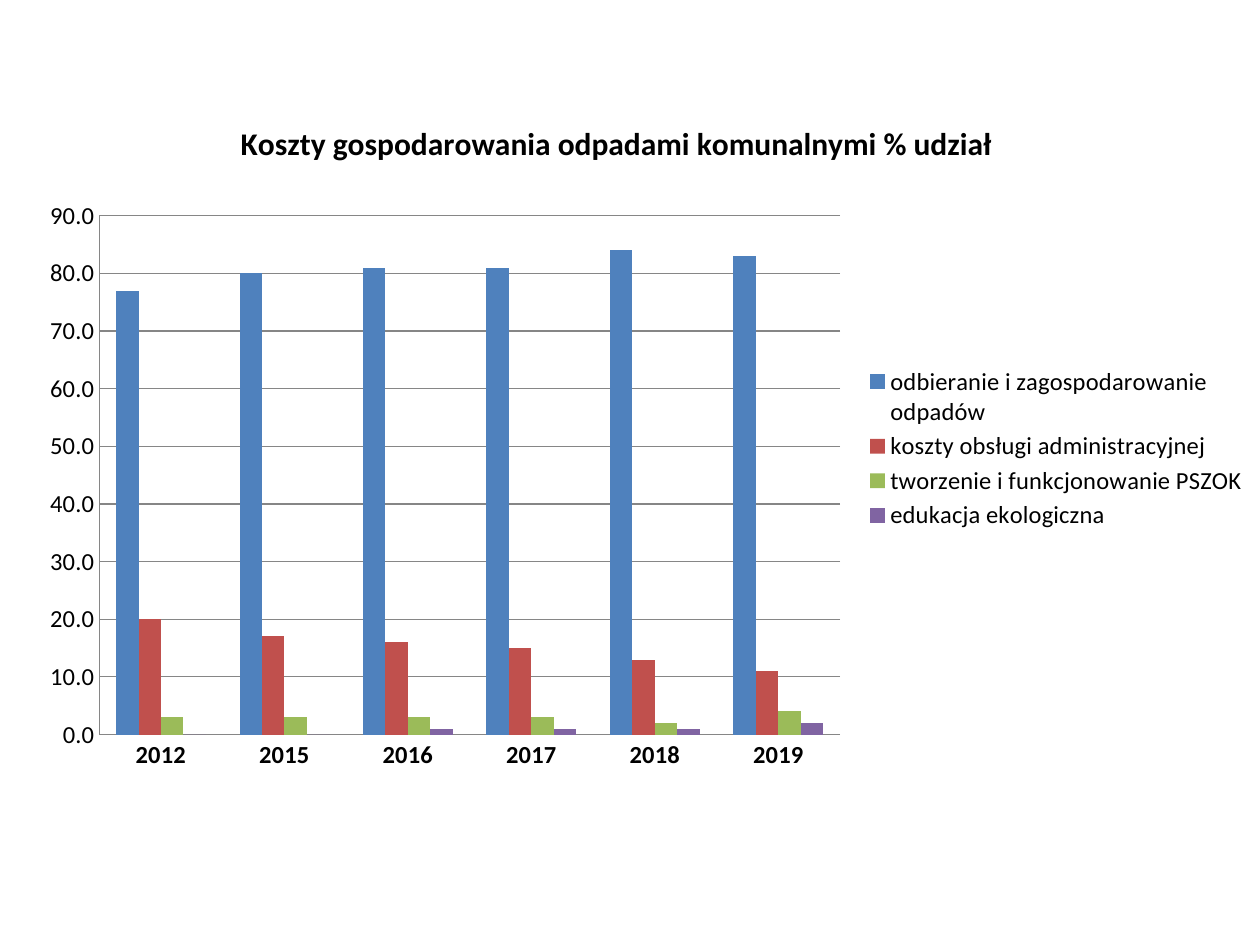
from lxml import etree
from pptx import Presentation, util as u
from pptx.chart.data import CategoryChartData
from pptx.dml.color import RGBColor
from pptx.enum import chart as ch
from pptx.oxml.ns import qn

# Content
TITLE = "Koszty gospodarowania odpadami komunalnymi % udział"
YEARS = ["2012", "2015", "2016", "2017", "2018", "2019"]
BLACK = RGBColor(0x00, 0x00, 0x00)
GRAY = RGBColor(0x86, 0x86, 0x86)
COSTS = [
    ("odbieranie i zagospodarowanie odpadów",
     [77, 80, 81, 81, 84, 83], RGBColor(0x4F, 0x81, 0xBD)),
    ("koszty obsługi administracyjnej",
     [20, 17, 16, 15, 13, 11], RGBColor(0xC0, 0x50, 0x4D)),
    ("tworzenie i funkcjonowanie PSZOK",
     [3, 3, 3, 3, 2, 4], RGBColor(0x9B, 0xBB, 0x59)),
    ("edukacja ekologiczna",
     [0, 0, 1, 1, 1, 2], RGBColor(0x80, 0x64, 0xA2)),
]


def style(font, size, bold=False):
    font.name, font.size, font.bold = "Calibri", u.Pt(size), bold
    font.color.rgb = BLACK


def place(element, index, **shares):
    """Fix a chart part at shares of the chart's size."""
    for old in element.findall(qn("c:layout")):
        element.remove(old)
    layout = etree.Element(qn("c:layout"))
    manual = etree.SubElement(layout, qn("c:manualLayout"))
    if element.tag == qn("c:plotArea"):
        etree.SubElement(manual, qn("c:layoutTarget")).set("val", "inner")
    for name in ("x", "y"):
        etree.SubElement(manual, qn(f"c:{name}Mode")).set("val", "edge")
    for name, share in shares.items():
        etree.SubElement(manual, qn(f"c:{name}")).set("val", str(share))
    element.insert(index, layout)


deck = Presentation()
deck.slide_width, deck.slide_height = u.Inches(10), u.Inches(7.5)
page = deck.slides.add_slide(deck.slide_layouts[6])

# Column chart
data = CategoryChartData(number_format="0.0")
data.categories = YEARS
for name, values, color in COSTS:
    data.add_series(name, values)
chart = page.shapes.add_chart(
    ch.XL_CHART_TYPE.COLUMN_CLUSTERED, u.Inches(0.2), u.Inches(0.92),
    u.Inches(9.8), u.Inches(5.28), data).chart
style(chart.font, 10)
plot = chart.plots[0]
plot.gap_width, plot.overlap, plot.vary_by_categories = 150, 0, False
for series, (name, values, color) in zip(plot.series, COSTS):
    series.format.fill.solid()
    series.format.fill.fore_color.rgb = color

# Title
chart.has_title = True
title = chart.chart_title
title.include_in_layout = False
title.text_frame.text = TITLE
style(title.text_frame.paragraphs[0].runs[0].font, 18, True)

# Axes
years, shares = chart.category_axis, chart.value_axis
for axis in (years, shares):
    axis.major_tick_mark = axis.minor_tick_mark = ch.XL_TICK_MARK.NONE
    style(axis.tick_labels.font, 14, axis is years)
    axis.format.line.color.rgb = GRAY
shares.minimum_scale, shares.maximum_scale, shares.major_unit = 0, 90, 10
shares.tick_labels.number_format = "0.0"
shares.tick_labels.number_format_is_linked = False
shares.has_major_gridlines = True
shares.major_gridlines.format.line.color.rgb = GRAY

# Legend
chart.has_legend = True
legend = chart.legend
legend.position = ch.XL_LEGEND_POSITION.RIGHT
legend.include_in_layout = False
style(legend.font, 14)

# Parts within the chart
space = chart.element
place(space.find(".//" + qn("c:plotArea")), 0, x=0.06, y=0.15, w=0.6, h=0.78)
place(space.find(".//" + qn("c:title")), 1, x=0.17, y=0)
place(space.find(".//" + qn("c:legend")), 1, x=0.68, y=0.37, w=0.31, h=0.26)

deck.save("out.pptx")
